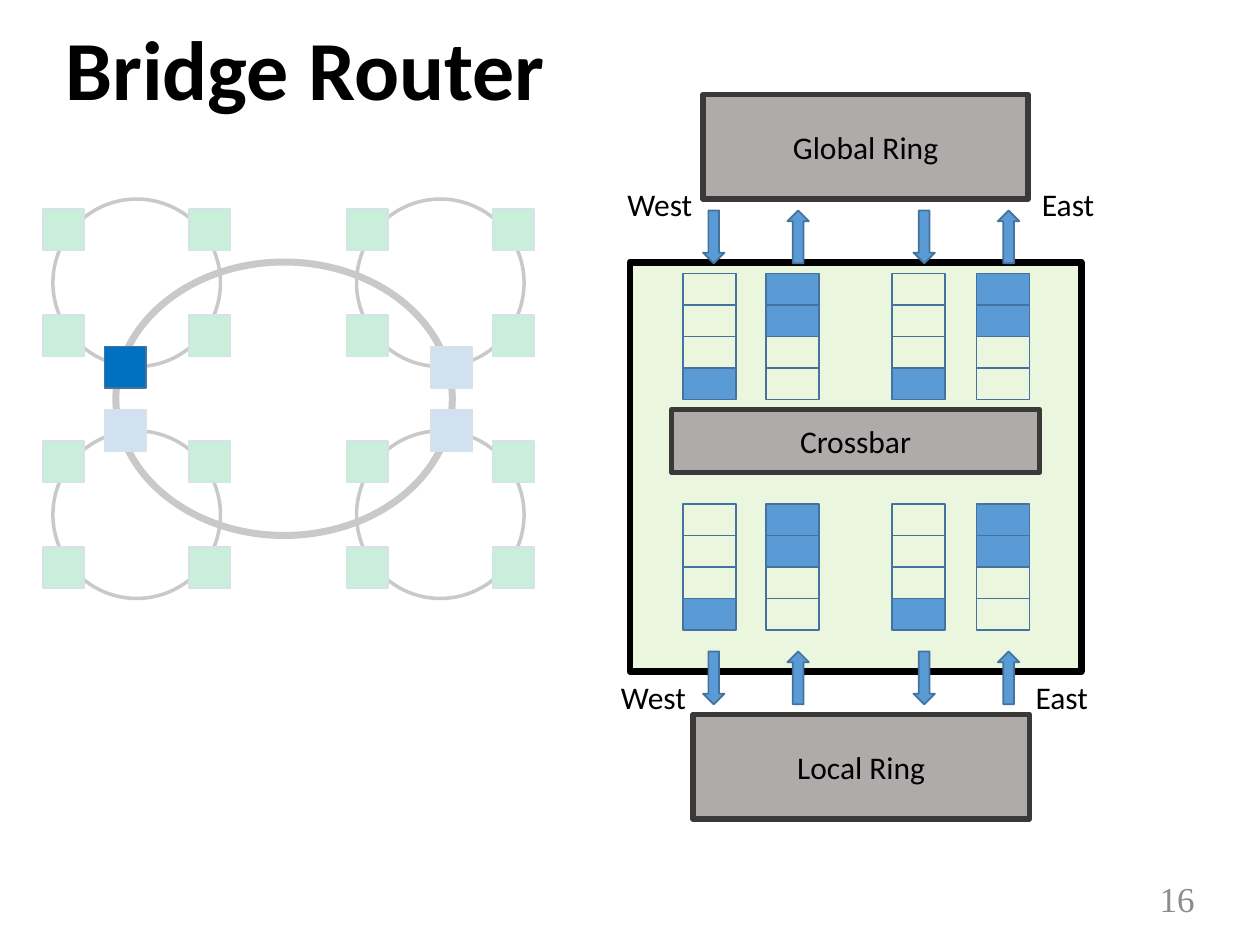
from itertools import product

from lxml import etree
from pptx import Presentation
from pptx.dml.color import RGBColor
from pptx.enum import shapes, text
from pptx.oxml import ns
from pptx.util import Inches, Pt

THEME = {
    "ink": "000000", "number": "8C8C8C", "veil": "FFFFFF",
    "bridge": "92D050", "block": "AFABAB", "block_edge": "3B3838",
    "queue": "5B9BD5", "edge": "43739E",
    "node": "00B050", "router": "2E75B6", "highlight": "0070C0",
    "font": "Calibri", "number_font": "Times New Roman",
    "title_size": 48, "number_size": 20, "label_size": 18,
}

TITLE = "Bridge Router"
PAGE_NUMBER = "16"

# Boxes are left, top, width, height in inches.
BRIDGE = (5, 2.08, 3.58, 3.25)
BLOCKS = [
    ("Global Ring", (5.58, 0.75, 2.58, 0.83)),
    ("Crossbar", (5.33, 3.25, 2.92, 0.5)),
    ("Local Ring", (5.5, 5.67, 2.67, 0.83)),
]
SIDES = [
    ("West", (4.88, 1.42, 0.72, 0.4)),
    ("East", (8.17, 1.42, 0.62, 0.4)),
    ("West", (4.83, 5.33, 0.72, 0.4)),
    ("East", (8.12, 5.33, 0.62, 0.4)),
]

# Queue left, arrow left, arrow direction, filled slots from the top
QUEUES = [
    (5.42, 5.58, "down", {3}),
    (6.08, 6.25, "up", {0, 1}),
    (7.08, 7.25, "down", {3}),
    (7.75, 7.92, "up", {0, 1}),
]
QUEUE_ROWS = [(2.17, 1.67), (4, 5.17)]  # queue top, arrow top
SLOTS, SLOT_W, SLOT_H = 4, 0.42, 0.25
ARROW_W, ARROW_H = 0.17, 0.42

LOCAL_LEFTS, LOCAL_TOPS = (0.42, 2.83), (1.58, 3.42)
LOCAL_SIZE, NODE = 1.33, 0.33
NODE_DX, NODE_DY = (-0.08, 1.08), (0.08, 0.92)
GLOBAL_RING = (0.92, 2.08, 2.67, 2.17)
ROUTERS = [(0.83, 3.25), (3.42, 2.75), (3.42, 3.25)]
CURRENT_ROUTER = (0.83, 2.75)
VEIL = (0, 1.33, 4.67, 3.67)

KIND = shapes.MSO_SHAPE
ARROWS = {"down": KIND.DOWN_ARROW, "up": KIND.UP_ARROW}


def color(name):
    return RGBColor.from_string(THEME[name])


def set_opacity(shape, percent):
    solid = shape.fill._xPr.find(ns.qn("a:solidFill"))
    etree.SubElement(solid[0], ns.qn("a:alpha"), val=str(percent * 1000))


def add_shape(page, kind, box, fill=None, edge=None, weight=1):
    shape = page.shapes.add_shape(kind, *map(Inches, box))
    shape.shadow.inherit = False
    if fill:
        shape.fill.solid()
        shape.fill.fore_color.rgb = color(fill)
    else:
        shape.fill.background()
    if edge:
        shape.line.color.rgb = color(edge)
        shape.line.width = Pt(weight)
    else:
        shape.line.fill.background()
    return shape


def write(shape, words, size="label_size", ink="ink", font="font",
          align=text.PP_ALIGN.LEFT, anchor=text.MSO_ANCHOR.MIDDLE):
    frame = shape.text_frame
    frame.vertical_anchor = anchor
    para = frame.paragraphs[0]
    para.text = words
    para.alignment = align
    para.font.size = Pt(THEME[size])
    para.font.name = THEME[font]
    para.font.color.rgb = color(ink)
    return para


def add_title(page):
    title = page.shapes.title
    title.left, title.top, title.width, title.height = map(
        Inches, (0.42, 0.17, 9.17, 0.83))
    para = write(title, TITLE, "title_size")
    para.font.bold = True
    para.line_spacing = 0.9


def add_ring_map(page):
    """Four local rings joined by the global one, faded behind a veil."""
    for top, left in product(LOCAL_TOPS, LOCAL_LEFTS):
        add_shape(page, KIND.OVAL, (left, top, LOCAL_SIZE, LOCAL_SIZE),
                  edge="ink", weight=2)
        for dy, dx in product(NODE_DY, NODE_DX):
            add_shape(page, KIND.RECTANGLE, (left + dx, top + dy, NODE, NODE),
                      "node", "edge")
    add_shape(page, KIND.OVAL, GLOBAL_RING, edge="ink", weight=4)
    for spot in ROUTERS:
        add_shape(page, KIND.RECTANGLE, (*spot, NODE, NODE), "router", "edge")
    set_opacity(add_shape(page, KIND.RECTANGLE, VEIL, "veil"), 79)
    add_shape(page, KIND.RECTANGLE, (*CURRENT_ROUTER, NODE, NODE),
              "highlight", "edge")


def add_bridge(page):
    set_opacity(add_shape(page, KIND.RECTANGLE, BRIDGE, "bridge", "ink", 4), 19)
    for words, box in BLOCKS:
        block = add_shape(page, KIND.RECTANGLE, box, "block", "block_edge", 3)
        write(block, words, align=text.PP_ALIGN.CENTER)
    for (queue_top, arrow_top), queue in product(QUEUE_ROWS, QUEUES):
        left, arrow_left, direction, filled = queue
        add_shape(page, ARROWS[direction],
                  (arrow_left, arrow_top, ARROW_W, ARROW_H), "queue", "edge")
        for slot in range(SLOTS):
            add_shape(page, KIND.RECTANGLE,
                      (left, queue_top + slot * SLOT_H, SLOT_W, SLOT_H),
                      "queue" if slot in filled else None, "edge")
    for words, box in SIDES:
        label = page.shapes.add_textbox(*map(Inches, box))
        label.text_frame.word_wrap = False
        label.text_frame.auto_size = text.MSO_AUTO_SIZE.SHAPE_TO_FIT_TEXT
        write(label, words, anchor=text.MSO_ANCHOR.TOP)


def add_page_number(page):
    box = page.shapes.add_textbox(*map(Inches, (8.83, 6.93, 0.75, 0.4)))
    box.text_frame.word_wrap = True
    write(box, PAGE_NUMBER, "number_size", "number", "number_font",
          text.PP_ALIGN.RIGHT)


def main():
    deck = Presentation()
    deck.slide_width, deck.slide_height = Inches(10), Inches(7.5)
    page = deck.slides.add_slide(deck.slide_layouts.get_by_name("Title Only"))
    add_title(page)
    add_page_number(page)
    add_ring_map(page)
    add_bridge(page)
    deck.save("out.pptx")


if __name__ == "__main__":
    main()
